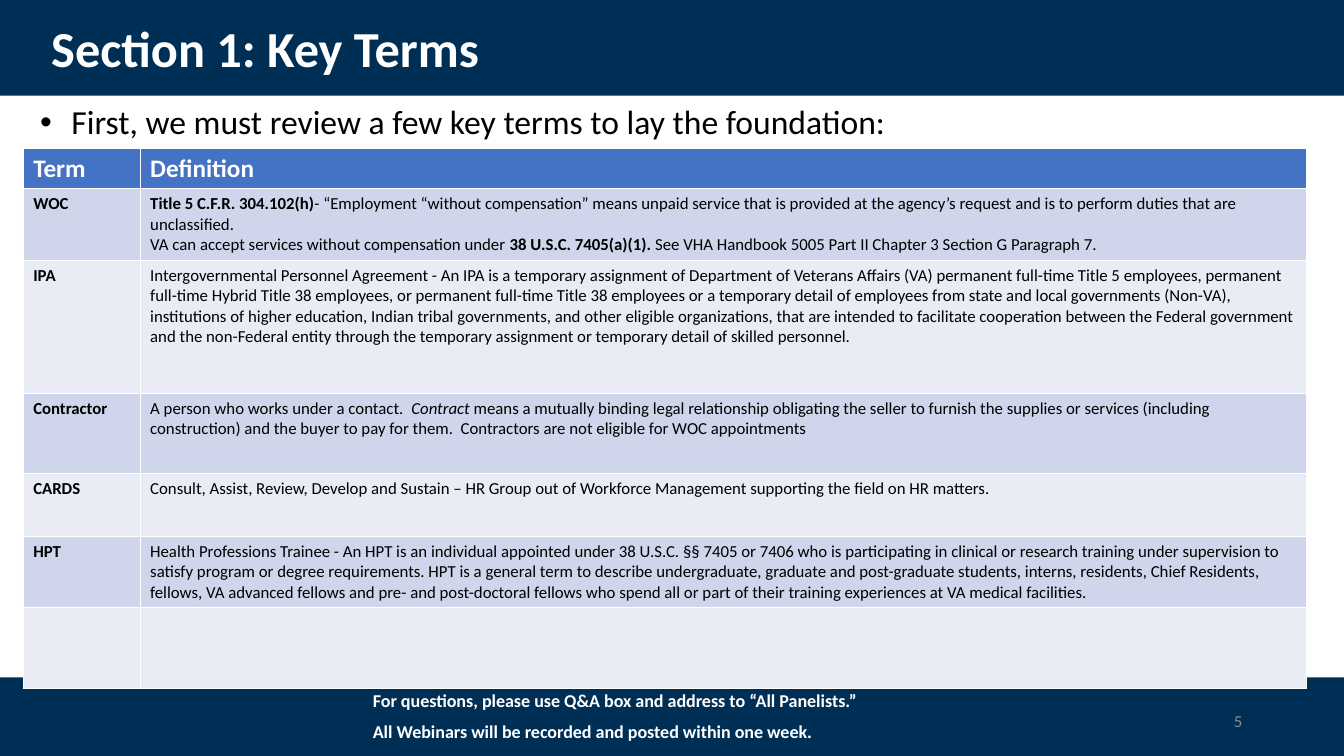
from lxml.etree import SubElement
from pptx import Presentation
from pptx.dml.color import RGBColor
from pptx.enum.shapes import MSO_SHAPE
from pptx.enum.text import MSO_ANCHOR, PP_ALIGN
from pptx.oxml.ns import qn
from pptx.util import Inches, Pt

FONT = "Calibri"
COLORS = {
    "navy": "002F56",
    "white": "FFFFFF",
    "black": "000000",
    "gray": "8C8C8C",
    "head": "4472C4",
    "dark": "CFD5EA",
    "light": "E9EBF5",
}
WIDTHS = [1.16, 11.57]
HEIGHTS = [0.4, 0.71, 1.32, 0.8, 0.62, 0.71, 0.8]

TERMS = [
    ("WOC", [
        [("Title 5 C.F.R. 304.102(h)", "b"),
         ("- “Employment “without compensation” means unpaid service that is "
          "provided at the agency’s request and is to perform duties that are "
          "unclassified.", "")],
        [("VA can accept services without compensation under ", ""),
         ("38 U.S.C. 7405(a)(1). ", "b"),
         ("See VHA Handbook 5005 Part II Chapter 3 Section G Paragraph 7.", "")],
    ]),
    ("IPA", [[(
        "Intergovernmental Personnel Agreement - An IPA is a temporary assignment "
        "of Department of Veterans Affairs (VA) permanent full-time Title 5 "
        "employees, permanent full-time Hybrid Title 38 employees, or permanent "
        "full-time Title 38 employees or a temporary detail of employees from "
        "state and local governments (Non-VA), institutions of higher education, "
        "Indian tribal governments, and other eligible organizations, that are "
        "intended to facilitate cooperation between the Federal government and "
        "the non-Federal entity through the temporary assignment or temporary "
        "detail of skilled personnel.", "")]]),
    ("Contractor", [[
        ("A person who works under a contact.  ", ""),
        ("Contract", "i"),
        (" means a mutually binding legal relationship obligating the seller to "
         "furnish the supplies or services (including construction) and the buyer "
         "to pay for them.  Contractors are not eligible for WOC appointments", ""),
    ]]),
    ("CARDS", [[(
        "Consult, Assist, Review, Develop and Sustain – HR Group out of Workforce "
        "Management supporting the field on HR matters.", "")]]),
    ("HPT", [[(
        "Health Professions Trainee - An HPT is an individual appointed under 38 "
        "U.S.C. §§ 7405 or 7406 who is participating in clinical or research "
        "training under supervision to satisfy program or degree requirements. "
        "HPT is a general term to describe undergraduate, graduate and "
        "post-graduate students, interns, residents, Chief Residents, fellows, VA "
        "advanced fellows and pre- and post-doctoral fellows who spend all or "
        "part of their training experiences at VA medical facilities.", "")]]),
]


def color(name):
    return RGBColor.from_string(COLORS[name])


def style(run, size, tone, marks=""):
    font = run.font
    font.name = FONT
    font.size = Pt(size)
    font.color.rgb = color(tone)
    font.bold = "b" in marks
    font.italic = "i" in marks


def add_band(slide, top, height):
    band = slide.shapes.add_shape(
        MSO_SHAPE.RECTANGLE, 0, Inches(top), Inches(13.33), Inches(height))
    band.shadow.inherit = False
    band.fill.solid()
    band.fill.fore_color.rgb = color("navy")
    band.line.fill.background()


def add_text(slide, box, lines, size, tone, marks="", space=1.0,
             anchor=MSO_ANCHOR.TOP, align=PP_ALIGN.LEFT):
    frame = slide.shapes.add_textbox(*map(Inches, box)).text_frame
    frame.word_wrap = True
    frame.vertical_anchor = anchor
    frame.text = "\n".join(lines)
    for index, para in enumerate(frame.paragraphs):
        para.alignment = align
        para.line_spacing = space
        if index:
            para.space_before = Pt(10)
        for run in para.runs:
            style(run, size, tone, marks)
    return frame


def add_bullet(para, indent):
    props = para._p.get_or_add_pPr()
    props.set("marL", str(Inches(indent)))
    props.set("indent", str(-Inches(indent)))
    SubElement(props, qn("a:buFont")).set("typeface", "Arial")
    SubElement(props, qn("a:buChar")).set("char", "•")


def fill_cell(cell, paras, size, tone):
    frame = cell.text_frame
    for index, runs in enumerate(paras):
        para = frame.add_paragraph() if index else frame.paragraphs[0]
        for text, marks in runs:
            run = para.add_run()
            run.text = text
            style(run, size, tone, marks)


def add_terms(slide):
    table = slide.shapes.add_table(
        len(HEIGHTS), len(WIDTHS), Inches(0.23), Inches(1.47),
        Inches(sum(WIDTHS)), Inches(sum(HEIGHTS))).table
    for column, width in zip(table.columns, WIDTHS):
        column.width = Inches(width)
    for index, height in enumerate(HEIGHTS):
        table.rows[index].height = Inches(height)
        band = "dark" if index % 2 else "light"
        for cell in table.rows[index].cells:
            cell.fill.solid()
            cell.fill.fore_color.rgb = color(band if index else "head")
    for index, title in enumerate(["Term", "Definition"]):
        fill_cell(table.cell(0, index), [[(title, "b")]], 18, "white")
    for index, (term, paras) in enumerate(TERMS, 1):
        fill_cell(table.cell(index, 0), [[(term, "b")]], 12, "black")
        fill_cell(table.cell(index, 1), paras, 12, "black")


def main():
    deck = Presentation()
    deck.slide_width = Inches(13.33)
    deck.slide_height = Inches(7.5)
    slide = deck.slides.add_slide(deck.slide_layouts[6])
    add_band(slide, 0, 0.95)
    add_band(slide, 6.72, 0.78)
    add_text(slide, (0.41, 0.12, 11.89, 0.77), ["Section 1: Key Terms"],
             36, "white", "b", 0.9, MSO_ANCHOR.MIDDLE)
    intro = add_text(
        slide, (0.3, 1, 12.88, 0.47),
        ["First, we must review a few key terms to lay the foundation:"],
        24, "black", space=0.9)
    add_bullet(intro.paragraphs[0], 0.31)
    add_terms(slide)
    add_text(slide, (9.42, 6.95, 3, 0.4), ["5"], 12, "gray",
             anchor=MSO_ANCHOR.MIDDLE, align=PP_ALIGN.RIGHT)
    add_text(slide, (3.6, 6.83, 5.26, 0.61),
             ["For questions, please use Q&A box and address to “All Panelists.”",
              "All Webinars will be recorded and posted within one week."],
             12.9, "white", "b", 0.8)
    deck.save("out.pptx")


if __name__ == "__main__":
    main()
